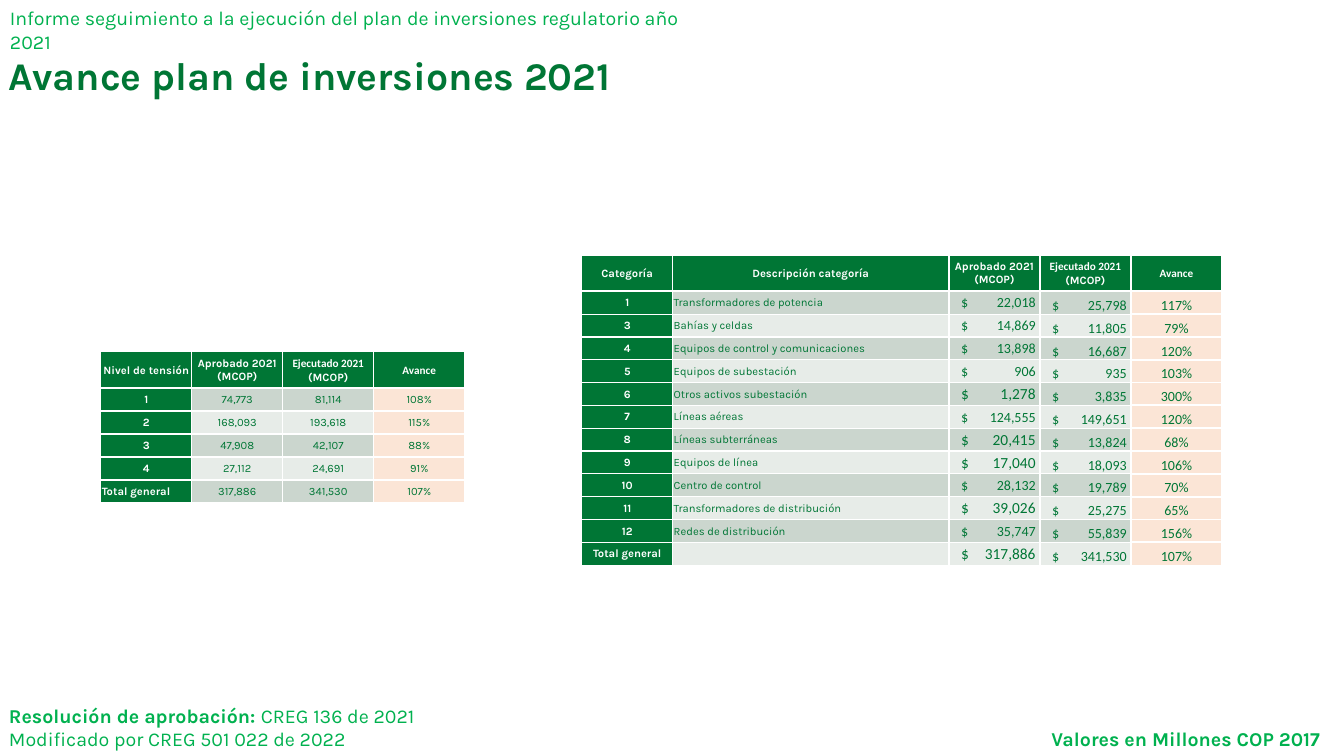
from collections import namedtuple

from pptx import Presentation
from pptx.dml.color import RGBColor
from pptx.enum.text import MSO_ANCHOR as Anchor, MSO_AUTO_SIZE as AutoSize, PP_ALIGN as Align
from pptx.oxml.ns import qn
from pptx.util import Inches, Pt
from lxml.etree import SubElement, Element

DARK_GREEN = RGBColor(0x00, 0x76, 0x35)
LIGHT_GREEN = RGBColor(0x00, 0xB1, 0x4F)
BAND_DARK = RGBColor(0xCB, 0xD6, 0xCE)
BAND_LIGHT = RGBColor(0xE7, 0xEC, 0xE8)
PEACH = RGBColor(0xFB, 0xE5, 0xD6)
WHITE = RGBColor(0xFF, 0xFF, 0xFF)

HEADER_HEIGHT = 0.36
BODY_FONT, NUMBER_FONT = "Karla", "Calibri"

# Look of one table cell
Look = namedtuple("Look", "size font color bold align anchor",
                  defaults=(8, BODY_FONT, DARK_GREEN, False, Align.CENTER, Anchor.MIDDLE))
HEADING = Look(color=WHITE, bold=True)

APPROVED = [("Aprobado 2021 (MCOP)", BODY_FONT)]
EXECUTED = [("Ejecutado 2021 ", NUMBER_FONT), ("(MCOP)", BODY_FONT)]
PROGRESS = [("Avance", NUMBER_FONT)]

VOLTAGE_HEADER = [[("Nivel de tensión", BODY_FONT)], APPROVED, EXECUTED, PROGRESS]
VOLTAGE_ROWS = [
    ("1", "74,773", "81,114", "108%"),
    ("2", "168,093", "193,618", "115%"),
    ("3", "47,908", "42,107", "88%"),
    ("4", "27,112", "24,691", "91%"),
    ("Total general", "317,886", "341,530", "107%"),
]

CATEGORY_HEADER = [[("Categoría", BODY_FONT)], [("Descripción categoría", BODY_FONT)],
                   APPROVED, EXECUTED, PROGRESS]
CATEGORY_ROWS = [
    ("1", "Transformadores de potencia", "22,018", "25,798", "117%"),
    ("3", "Bahías y celdas", "14,869", "11,805", "79%"),
    ("4", "Equipos de control y comunicaciones", "13,898", "16,687", "120%"),
    ("5", "Equipos de subestación", "906", "935", "103%"),
    ("6", "Otros activos subestación", "1,278", "3,835", "300%"),
    ("7", "Líneas aéreas", "124,555", "149,651", "120%"),
    ("8", "Líneas subterráneas", "20,415", "13,824", "68%"),
    ("9", "Equipos de línea", "17,040", "18,093", "106%"),
    ("10", "Centro de control", "28,132", "19,789", "70%"),
    ("11", "Transformadores de distribución", "39,026", "25,275", "65%"),
    ("12", "Redes de distribución", "35,747", "55,839", "156%"),
    ("Total general", "", "317,886", "341,530", "107%"),
]
LARGE_AMOUNT_ROWS = {"6", "8", "9", "11", "Total general"}


def style_span(span, size, font, color, bold):
    span.font.size = Pt(size)
    span.font.name = font
    span.font.color.rgb = color
    span.font.bold = bold


def add_text(page, place, lines, size=14, color=LIGHT_GREEN, fit=True):
    """Each line is a list of (text, bold) spans."""
    box = page.shapes.add_textbox(*map(Inches, place))
    frame = box.text_frame
    frame.word_wrap = True
    if fit:
        frame.auto_size = AutoSize.SHAPE_TO_FIT_TEXT
    for index, line in enumerate(lines):
        para = frame.paragraphs[0] if index == 0 else frame.add_paragraph()
        for text, bold in line:
            span = para.add_run()
            span.text = text
            style_span(span, size, BODY_FONT, color, bold)
    return frame


def set_borders(cell, top, bottom):
    properties = cell._tc.get_or_add_tcPr()
    sides = (("a:lnL", 1), ("a:lnR", 1), ("a:lnT", top), ("a:lnB", bottom))
    for index, (side, width) in enumerate(sides):
        line = Element(qn(side), w=str(Pt(width)))
        SubElement(SubElement(line, qn("a:solidFill")), qn("a:srgbClr"), val=str(WHITE))
        properties.insert(index, line)


def fill_cell(cell, spans, look, fill, top=1, bottom=1):
    """Spans are (text, font) pairs."""
    cell.fill.solid()
    cell.fill.fore_color.rgb = fill
    set_borders(cell, top, bottom)
    cell.vertical_anchor = look.anchor
    cell.margin_left = cell.margin_right = cell.margin_top = Inches(0.01)
    cell.margin_bottom = 0
    para = cell.text_frame.paragraphs[0]
    para.alignment = look.align
    for text, font in spans:
        span = para.add_run()
        span.text = text
        style_span(span, look.size, font, look.color, look.bold)
    if not spans:
        SubElement(para._p, qn("a:endParaRPr"), sz=str(look.size * 100))


def align_amount(cell):
    """Peso sign at the left, figure against a right tab."""
    cell.margin_left = Inches(0.12)
    para = cell.text_frame.paragraphs[0]
    tabs = SubElement(para._p.get_or_add_pPr(), qn("a:tabLst"))
    SubElement(tabs, qn("a:tab"), pos=str(Inches(0.74)), algn="r")


def add_grid(page, place, widths, header, rows, look_for):
    left, top, width, height = place
    frame = page.shapes.add_table(len(rows) + 1, len(header), *map(Inches, place))
    table = frame.table
    table.first_row = table.horz_banding = False
    for column, column_width in zip(table.columns, widths):
        column.width = Inches(column_width)
    for row in table.rows:
        row.height = Inches((height - HEADER_HEIGHT) / len(rows))
    table.rows[0].height = Inches(HEADER_HEIGHT)

    for column, spans in enumerate(header):
        fill_cell(table.cell(0, column), spans, HEADING, DARK_GREEN, bottom=1.5)

    last_column = len(header) - 1
    for number, values in enumerate(rows, 1):
        band = BAND_DARK if number % 2 else BAND_LIGHT
        for column, text in enumerate(values):
            cell = table.cell(number, column)
            look = look_for(column, values[0])
            is_progress = column == last_column
            fill = DARK_GREEN if column == 0 else PEACH if is_progress else band
            top_line = 1.5 if number == 1 or is_progress else 1
            bottom_line = 1.5 if is_progress and number < len(rows) else 1
            spans = [(text, look.font)] if text else []
            fill_cell(cell, spans, look, fill, top_line, bottom_line)
            if text.startswith("$"):
                align_amount(cell)


def voltage_look(column, label):
    if column == 0:
        return HEADING._replace(align=Align.LEFT) if label == "Total general" else HEADING
    return Look()


def category_look(column, label):
    if column == 0:
        return HEADING
    if column == 1:
        return Look(align=Align.LEFT)
    if column == 2:
        size = 11 if label in LARGE_AMOUNT_ROWS else 10
        return Look(size, NUMBER_FONT, align=Align.LEFT)
    align = Align.LEFT if column == 3 else Align.CENTER
    return Look(10, NUMBER_FONT, align=align, anchor=Anchor.BOTTOM)


def main():
    deck = Presentation()
    deck.slide_width, deck.slide_height = Inches(13.33), Inches(7.5)
    page = deck.slides.add_slide(deck.slide_layouts[6])

    # Title and notes in the corners
    title = add_text(page, (-0.01, 0.51, 8.48, 0.71),
                     [[("Avance plan de inversiones 2021", True)]], 28, DARK_GREEN, fit=False)
    title.paragraphs[0].line_spacing = 0.9
    add_text(page, (-0.01, 6.93, 4.27, 0.57),
             [[("Resolución de aprobación: ", True), ("CREG 136 de 2021", False)],
              [("Modificado por CREG 501 022 de 2022", False)]])
    add_text(page, (0, 0.01, 7.2, 0.34),
             [[("Informe seguimiento a la ejecución del plan de inversiones regulatorio año 2021",
                False)]])
    add_text(page, (10.33, 7.16, 2.9, 0.34), [[("Valores en Millones COP 2017", True)]])

    # Progress by voltage level
    add_grid(page, (1, 3.49, 3.61, 1.5), [3.61 / 4] * 4,
             VOLTAGE_HEADER, VOLTAGE_ROWS, voltage_look)

    # Progress by asset category
    narrow = (6.35 - 2.74) / 4
    amounts = [(label, name, "$\t" + approved, "$\t" + executed, progress)
               for label, name, approved, executed, progress in CATEGORY_ROWS]
    add_grid(page, (5.77, 2.53, 6.35, 3.08), [narrow, 2.74] + [narrow] * 3,
             CATEGORY_HEADER, amounts, category_look)

    deck.save("out.pptx")


if __name__ == "__main__":
    main()
